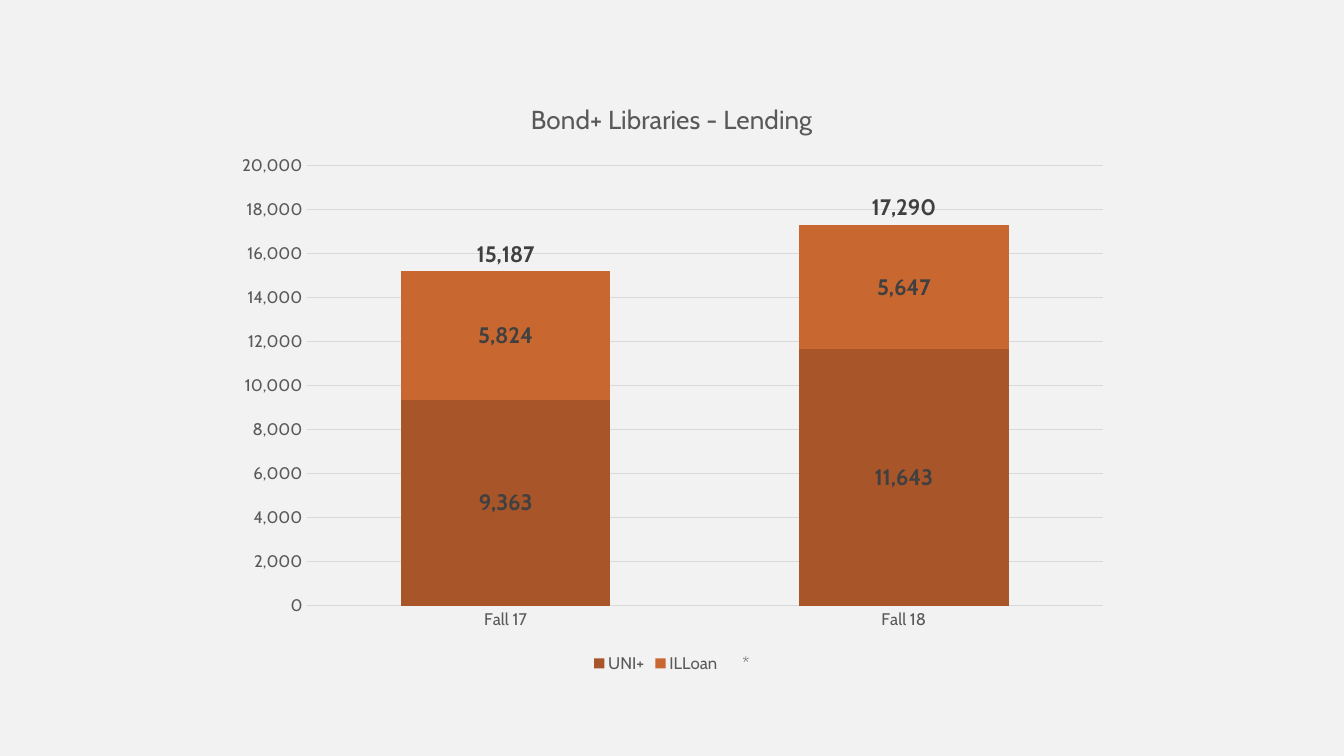
from lxml import etree
from pptx import Presentation
from pptx.chart.data import CategoryChartData
from pptx.dml.color import RGBColor
from pptx.enum.chart import (XL_CHART_TYPE, XL_LABEL_POSITION, XL_LEGEND_POSITION,
                             XL_MARKER_STYLE, XL_TICK_MARK)
from pptx.oxml.ns import qn
from pptx.util import Inches, Pt

TITLE = "Bond+ Libraries - Lending"
TERMS = ["Fall 17", "Fall 18"]
LENDING = {"UNI+": (9363, 11643), "ILLoan": (5824, 5647)}
TOTAL_NAME = "*"
SERIES_COLORS = ["A75529", "C96731"]
BACKGROUND, GRID, TEXT, LABEL = "F2F2F2", "D9D9D9", "595959", "404040"
FONT = "Cabin"
NUMBER_FORMAT = "#,##0"

# left, top, width, height on the slide
CHART_AREA = (2.22, 0.79, 8.89, 5.93)
PLOT_AREA = (3.04, 1.64, 7.9, 4.37)


def paint(fill, color):
    fill.solid()
    fill.fore_color.rgb = RGBColor.from_string(color)


def style_font(font, size, color, bold=False):
    font.name, font.size, font.bold = FONT, Pt(size), bold
    font.color.rgb = RGBColor.from_string(color)


def style_line(line, color):
    paint(line.fill, color)
    line.width = Pt(0.75)


def add_child(parent, tag, value=None):
    child = etree.SubElement(parent, qn(tag))
    if value is not None:
        child.set("val", str(value))
    return child


def move_last_series_to_line(chart):
    """Draw the last column series as a line on the same axes."""
    columns = chart.plots[0]
    totals = columns.series[-1].format and columns._element.findall(qn("c:ser"))[-1]
    for unused in totals.findall(qn("c:invertIfNegative")):
        totals.remove(unused)
    line_chart = etree.Element(qn("c:lineChart"))
    add_child(line_chart, "c:grouping", "standard")
    add_child(line_chart, "c:varyColors", 0)
    line_chart.append(totals)
    add_child(line_chart, "c:marker", 1)
    for axis in columns._element.findall(qn("c:axId")):
        add_child(line_chart, "c:axId", axis.get("val"))
    columns._element.addnext(line_chart)


def place_plot(chart):
    """Fix the inner plot area as fractions of the chart area."""
    plot_area = chart._chartSpace.chart.plotArea
    for old in plot_area.findall(qn("c:layout")):
        plot_area.remove(old)
    layout = etree.Element(qn("c:layout"))
    manual = add_child(layout, "c:manualLayout")
    add_child(manual, "c:layoutTarget", "inner")
    add_child(manual, "c:xMode", "edge")
    add_child(manual, "c:yMode", "edge")
    left, top, width, height = CHART_AREA
    plot_left, plot_top, plot_width, plot_height = PLOT_AREA
    add_child(manual, "c:x", (plot_left - left) / width)
    add_child(manual, "c:y", (plot_top - top) / height)
    add_child(manual, "c:w", plot_width / width)
    add_child(manual, "c:h", plot_height / height)
    plot_area.insert(0, layout)


def label_series(series, position):
    labels = series.data_labels
    labels.show_value = True
    labels.position = position
    labels.number_format = NUMBER_FORMAT
    labels.number_format_is_linked = False
    style_font(labels.font, 16, LABEL, bold=True)


def style_axes(chart):
    for axis in (chart.category_axis, chart.value_axis):
        axis.major_tick_mark = axis.minor_tick_mark = XL_TICK_MARK.NONE
        style_font(axis.tick_labels.font, 12, TEXT)
    style_line(chart.category_axis.format.line, GRID)
    values = chart.value_axis
    values.minimum_scale, values.maximum_scale, values.major_unit = 0, 20000, 2000
    values.format.line.fill.background()
    style_line(values.major_gridlines.format.line, GRID)
    values.tick_labels.number_format = NUMBER_FORMAT
    values.tick_labels.number_format_is_linked = False


def add_lending_chart(slide):
    data = CategoryChartData(number_format=NUMBER_FORMAT)
    data.categories = TERMS
    for service, loans in LENDING.items():
        data.add_series(service, loans)
    data.add_series(TOTAL_NAME, [sum(term) for term in zip(*LENDING.values())])
    chart = slide.shapes.add_chart(
        XL_CHART_TYPE.COLUMN_STACKED, *map(Inches, CHART_AREA), data).chart
    style_font(chart.font, 10, "000000")

    chart.has_title = True
    title = chart.chart_title.text_frame
    title.text = TITLE
    style_font(title.paragraphs[0].font, 18.6, TEXT)
    chart.has_legend = True
    chart.legend.position = XL_LEGEND_POSITION.BOTTOM
    chart.legend.include_in_layout = False
    style_font(chart.legend.font, 12, TEXT)

    style_axes(chart)
    place_plot(chart)
    move_last_series_to_line(chart)
    columns, totals = chart.plots
    columns.gap_width, columns.overlap = 90, 100
    columns.vary_by_categories = False
    for service, color in zip(columns.series, SERIES_COLORS):
        paint(service.format.fill, color)
        label_series(service, XL_LABEL_POSITION.CENTER)
    total = totals.series[0]
    total.format.line.fill.background()
    total.marker.style = XL_MARKER_STYLE.NONE
    total.smooth = False
    label_series(total, XL_LABEL_POSITION.ABOVE)


def main():
    deck = Presentation()
    deck.slide_width, deck.slide_height = Inches(13.33), Inches(7.5)
    slide = deck.slides.add_slide(deck.slide_layouts[6])
    paint(slide.background.fill, BACKGROUND)
    add_lending_chart(slide)
    deck.save("out.pptx")


if __name__ == "__main__":
    main()
